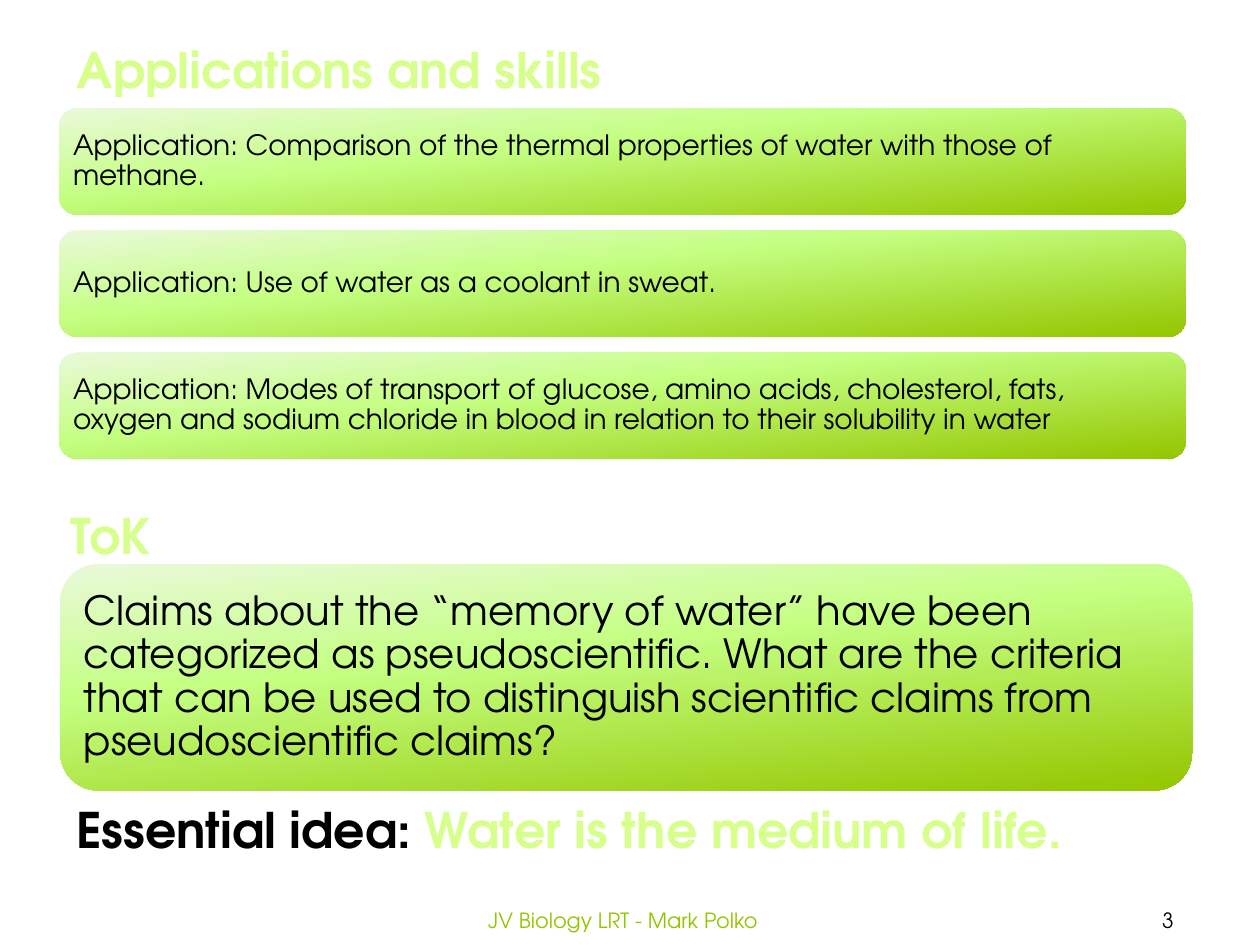
from copy import deepcopy
from dataclasses import dataclass

from pptx import Presentation
from pptx.dml.color import RGBColor
from pptx.enum import shapes, text
from pptx.oxml import ns
from pptx.util import Pt

FONT = "TeX Gyre Adventor"
BLACK, LIME, GREEN = "000000", "D6FF8C", "94C600"
STOPS = ((0, "EAF9DA"), (0.4, "C4FF82"), (1, GREEN))
LEFT, MID = text.PP_ALIGN.LEFT, text.PP_ALIGN.CENTER


@dataclass
class Box:
    x: float
    y: float
    w: float
    h: float


@dataclass
class Run:
    text: str
    hue: str = BLACK


@dataclass
class Card:
    box: Box
    text: str
    size: float
    pad: float


def tint(color, hue: str) -> None:
    color.rgb = RGBColor.from_string(hue)


def place(shape, box: Box) -> None:
    sides = {"left": box.x, "top": box.y, "width": box.w, "height": box.h}
    for name, val in sides.items():
        setattr(shape, name, Pt(val))


def write(shape, runs: list[Run], size: float, bold: bool = False,
          align=LEFT, anchor=text.MSO_ANCHOR.MIDDLE, gap: float = 1.0,
          pads: tuple = (7.2, 3.6)) -> None:
    frame = shape.text_frame
    side, end = map(Pt, pads)
    form = {"word_wrap": True, "auto_size": text.MSO_AUTO_SIZE.NONE,
            "vertical_anchor": anchor, "margin_left": side,
            "margin_right": side, "margin_top": end, "margin_bottom": end}
    for name, val in form.items():
        setattr(frame, name, val)
    para = frame.paragraphs[0]
    para.alignment, para.line_spacing = align, gap
    for item in runs:
        run = para.add_run()
        run.text = item.text
        for name, val in {"name": FONT, "size": Pt(size), "bold": bold}.items():
            setattr(run.font, name, val)
        tint(run.font.color, item.hue)


def shade(shape) -> None:
    shape.fill.gradient()
    shape.fill.gradient_angle = 276
    stops = shape._element.spPr.find(".//" + ns.qn("a:gsLst"))
    stops.append(deepcopy(stops[0]))
    for stop, (spot, hue) in zip(shape.fill.gradient_stops, STOPS):
        stop.position = spot
        tint(stop.color, hue)


def draw(slide, card: Card) -> None:
    shape = slide.shapes.add_shape(shapes.MSO_SHAPE.ROUNDED_RECTANGLE, 0, 0, 0, 0)
    place(shape, card.box)
    shape.shadow.inherit = False
    shape.line.fill.background()
    shade(shape)
    write(shape, [Run(card.text)], card.size, gap=0.9, pads=(card.pad, card.pad))


def label(slide, box: Box, runs: list[Run], size: float, **form) -> None:
    shape = slide.shapes.add_textbox(0, 0, 0, 0)
    place(shape, box)
    write(shape, runs, size, **form)


def main() -> None:
    deck = Presentation()
    deck.slide_width, deck.slide_height = Pt(720), Pt(540)
    slide = deck.slides.add_slide(deck.slide_layouts[5])
    head = {"size": 28, "bold": True, "anchor": text.MSO_ANCHOR.TOP}

    title = slide.shapes.title
    place(title, Box(36.7, 18.7, 345.6, 41))
    write(title, [Run("Applications and skills", LIME)], **head)

    skills = (
        "Application: Comparison of the thermal properties of water with those of methane.",
        "Application: Use of water as a coolant in sweat.",
        "Application: Modes of transport of glucose, amino acids, cholesterol, fats, "
        "oxygen and sodium chloride in blood in relation to their solubility in water",
    )
    cards = [Card(Box(33.8, 61.8 + 69.8 * i, 643.9, 60.8), words, 16, 5)
             for i, words in enumerate(skills)]
    cards.append(Card(
        Box(34.5, 322.5, 646.7, 129.2),
        "Claims about the “memory of water” have been categorized as "
        "pseudoscientific. What are the criteria that can be used to distinguish "
        "scientific claims from pseudoscientific claims?", 23, 7.2))
    for card in cards:
        draw(slide, card)

    label(slide, Box(33.1, 285.1, 345.6, 41), [Run("ToK", LIME)], **head)
    label(slide, Box(36.7, 453.6, 650.2, 41),
          [Run("Essential idea:"), Run(" Water is the medium of life.", LIME)], **head)
    label(slide, Box(218.2, 511.2, 275.8, 28.8),
          [Run("JV Biology LRT - Mark Polko", GREEN)], 12, align=MID)
    label(slide, Box(614.9, 511.2, 105.1, 28.8), [Run("3")], 12, align=MID)
    deck.save("out.pptx")


if __name__ == "__main__":
    main()
